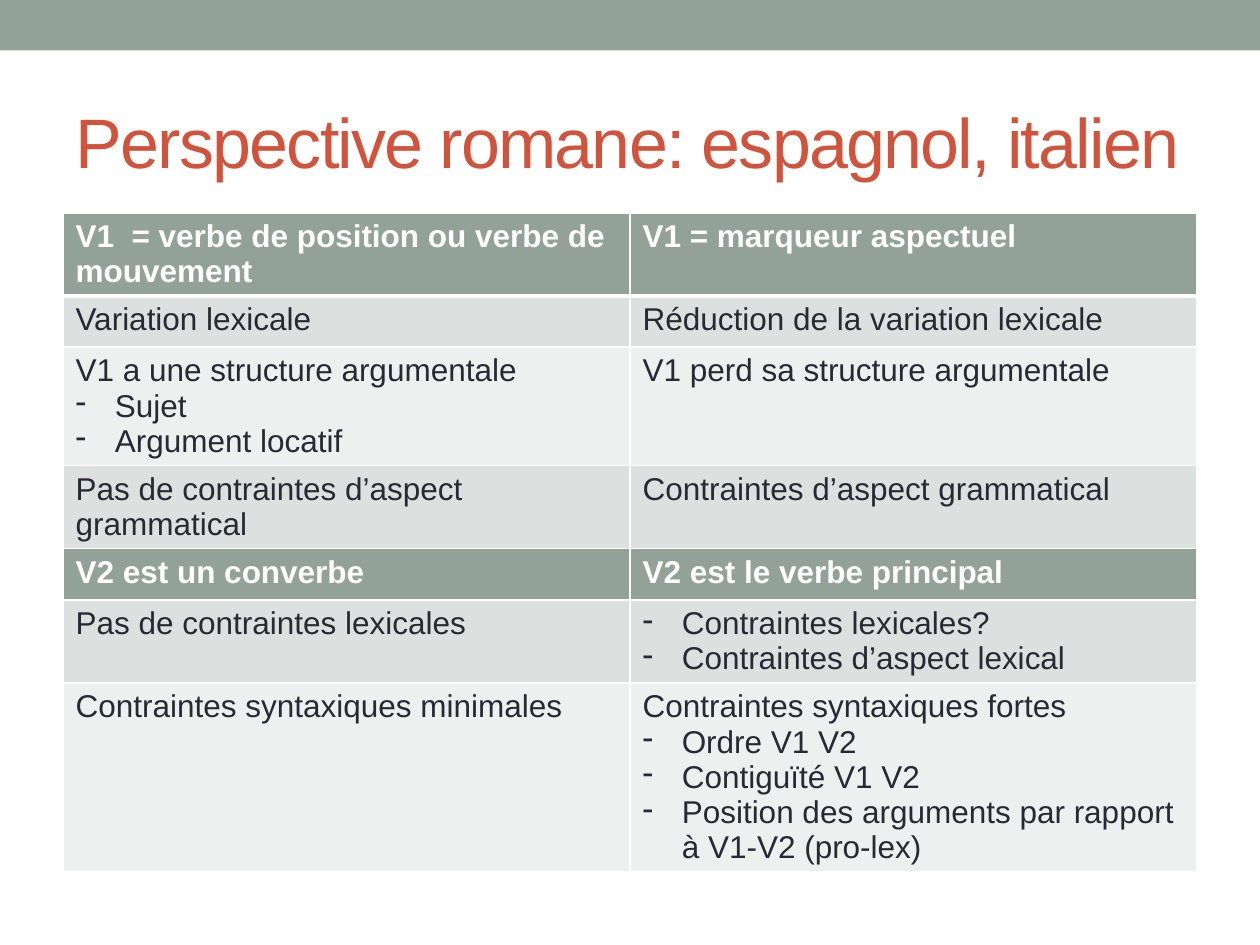
from dataclasses import dataclass

import pptx
import pptx.dml.color
import pptx.enum.shapes
import pptx.enum.text
import pptx.oxml
import pptx.oxml.ns
import pptx.util
from pptx.dml.color import RGBColor
from pptx.util import Cm

SAGE = RGBColor(0x93, 0xA2, 0x99)
BAND_DARK = RGBColor(0xDC, 0xE0, 0xDE)
BAND_LIGHT = RGBColor(0xEE, 0xF0, 0xEF)
BRICK = RGBColor(0xD2, 0x53, 0x3C)
INK = RGBColor(0x29, 0x29, 0x34)
WHITE = RGBColor(0xFF, 0xFF, 0xFF)

FONT = "Arial"
DASH = "- "  # lines that start with this become list items
LIST_INDENT = Cm(0.79)
ROW_HEIGHT = Cm(1.03)
LAST_ROW_HEIGHT = Cm(2.16)


@dataclass(frozen=True)
class ComparisonRow:
    left: tuple[str, ...]
    right: tuple[str, ...]
    fill: RGBColor

    @property
    def is_heading(self) -> bool:
        return self.fill == SAGE


ROWS = [
    ComparisonRow(("V1  = verbe de position ou verbe de mouvement",),
                  ("V1 = marqueur aspectuel",), SAGE),
    ComparisonRow(("Variation lexicale",),
                  ("Réduction de la variation lexicale",), BAND_DARK),
    ComparisonRow(("V1 a une structure argumentale", "- Sujet", "- Argument locatif"),
                  ("V1 perd sa structure argumentale",), BAND_LIGHT),
    ComparisonRow(("Pas de contraintes d’aspect grammatical",),
                  ("Contraintes d’aspect grammatical",), BAND_DARK),
    ComparisonRow(("V2 est un converbe",), ("V2 est le verbe principal",), SAGE),
    ComparisonRow(("Pas de contraintes lexicales",),
                  ("- Contraintes lexicales?", "- Contraintes d’aspect lexical"), BAND_DARK),
    ComparisonRow(("Contraintes syntaxiques minimales",),
                  ("Contraintes syntaxiques fortes", "- Ordre V1 V2", "- Contiguïté V1 V2",
                   "- Position des arguments par rapport à V1-V2 (pro-lex)"), BAND_LIGHT),
]


def add_span(para, text: str, size: float, color: RGBColor, bold: bool = False):
    span = para.add_run()
    span.text = text
    span.font.name = FONT
    span.font.size = pptx.util.Pt(size)
    span.font.bold = bold
    span.font.color.rgb = color
    return span


def make_list_item(para) -> None:
    properties = para._p.get_or_add_pPr()
    properties.set("marL", str(LIST_INDENT))
    properties.set("indent", str(-LIST_INDENT))
    bullet = pptx.oxml.parse_xml(
        f'<a:buChar {pptx.oxml.ns.nsdecls("a")} char="-"/>')
    properties.append(bullet)


def set_borders(cell, widths: dict[str, float]) -> None:
    """Draw white cell borders; widths are points keyed by side L, R, T, B in that order."""
    properties = cell._tc.get_or_add_tcPr()
    for position, (side, width) in enumerate(widths.items()):
        line = pptx.oxml.parse_xml(
            f'<a:ln{side} {pptx.oxml.ns.nsdecls("a")} w="{pptx.util.Pt(width)}">'
            f'<a:solidFill><a:srgbClr val="{WHITE}"/></a:solidFill></a:ln{side}>')
        properties.insert(position, line)


def fill_cell(cell, lines: tuple[str, ...], row: ComparisonRow) -> None:
    cell.fill.solid()
    cell.fill.fore_color.rgb = row.fill
    color = WHITE if row.is_heading else INK
    for index, line in enumerate(lines):
        frame = cell.text_frame
        para = frame.add_paragraph() if index else frame.paragraphs[0]
        if line.startswith(DASH):
            make_list_item(para)
        add_span(para, line.removeprefix(DASH), 18, color, row.is_heading)


def add_top_band(page, width: int) -> None:
    band = page.shapes.add_shape(
        pptx.enum.shapes.MSO_SHAPE.RECTANGLE, 0, 0, width, Cm(1.02))
    band.shadow.inherit = False
    band.fill.solid()
    band.fill.fore_color.rgb = SAGE
    band.line.fill.background()


def add_title(page, text: str) -> None:
    title = page.shapes.title
    title.left, title.top, title.width, title.height = Cm(1.27), Cm(1.47), Cm(22.86), Cm(2.74)
    frame = title.text_frame
    frame.word_wrap = True
    frame.auto_size = pptx.enum.text.MSO_AUTO_SIZE.NONE
    frame.vertical_anchor = pptx.enum.text.MSO_ANCHOR.MIDDLE
    para = frame.paragraphs[0]
    para.alignment = pptx.enum.text.PP_ALIGN.LEFT
    span = add_span(para, text, 40, BRICK)
    span.font._element.set("spc", "-100")


def add_comparison(page, rows: list[ComparisonRow]) -> None:
    height = ROW_HEIGHT * (len(rows) - 1) + LAST_ROW_HEIGHT
    table = page.shapes.add_table(
        len(rows), 2, Cm(1.27), Cm(4.29), Cm(22.86), height).table
    for index, row in enumerate(rows):
        is_last = index == len(rows) - 1
        table.rows[index].height = LAST_ROW_HEIGHT if is_last else ROW_HEIGHT
        # Below the first row, the bottom border of the row above is the top border.
        widths = {"L": 1, "R": 1, "B": 1} if index else {"L": 1, "R": 1, "T": 1, "B": 3}
        for column, lines in enumerate((row.left, row.right)):
            cell = table.cell(index, column)
            fill_cell(cell, lines, row)
            set_borders(cell, widths)


def main() -> None:
    deck = pptx.Presentation()
    deck.slide_width, deck.slide_height = Cm(25.4), Cm(19.05)
    page = deck.slides.add_slide(deck.slide_layouts.get_by_name("Title Only"))
    add_top_band(page, deck.slide_width)
    add_title(page, "Perspective romane: espagnol, italien")
    add_comparison(page, ROWS)
    deck.save("out.pptx")


if __name__ == "__main__":
    main()
